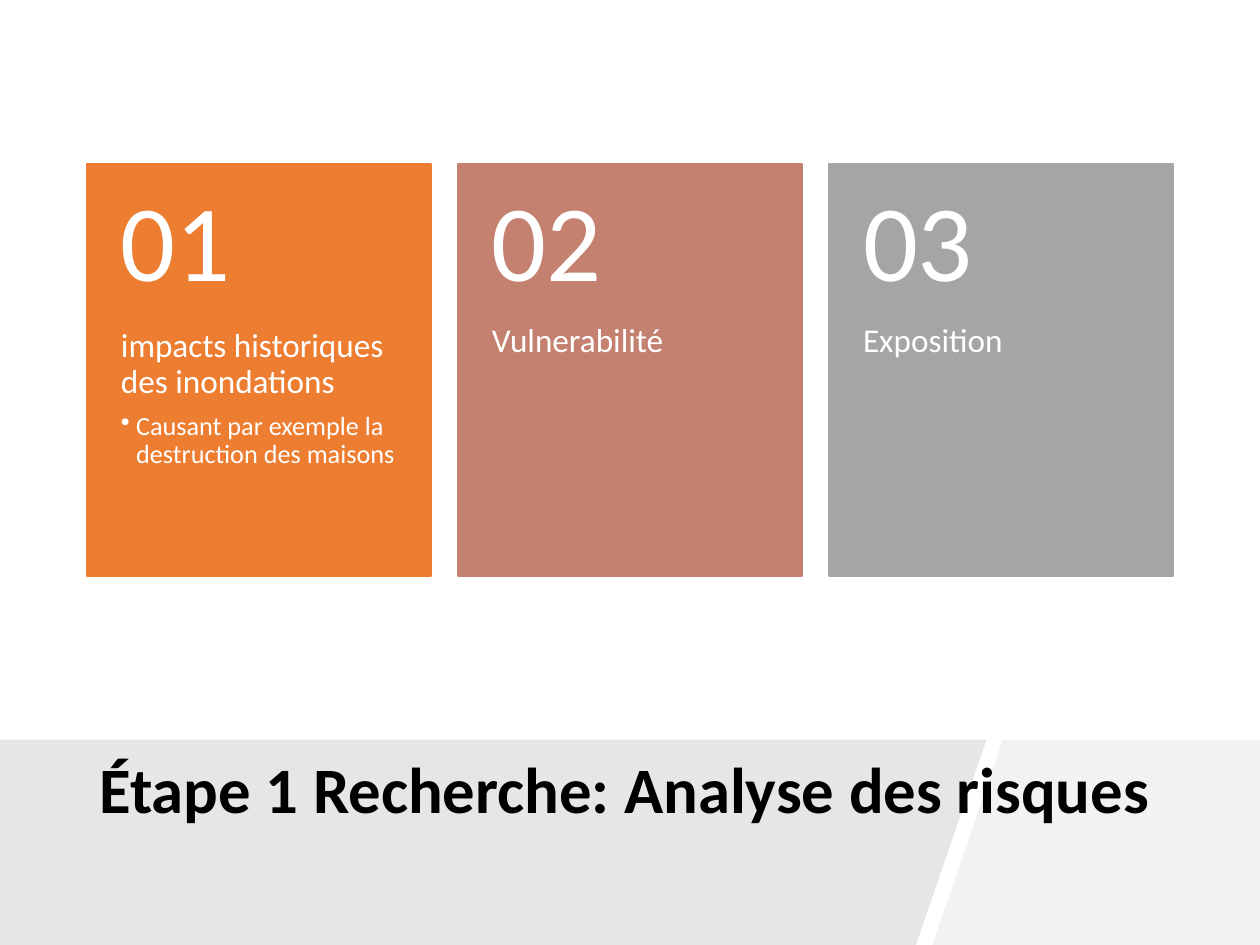
from lxml.etree import SubElement
from pptx import Presentation
from pptx.dml.color import RGBColor
from pptx.enum.shapes import MSO_SHAPE
from pptx.enum.text import MSO_ANCHOR, MSO_AUTO_SIZE, PP_ALIGN
from pptx.oxml.ns import qn
from pptx.util import Inches, Pt

FONT = "Calibri"
WHITE = "FFFFFF"
LEFT, TOP, WIDTH = 0.69, 1.3, 2.73
STEP = 2.945
HEAD, BODY = 1.31, 1.96

CARDS = [
    ("01", "ED7D31", "impacts historiques des inondations",
     "Causant par exemple la destruction des maisons"),
    ("02", "C48170", "Vulnerabilité", None),
    ("03", "A5A5A5", "Exposition", None),
]


def color(code):
    return RGBColor.from_string(code)


def add_band(slide, points, fill):
    corners = [(Inches(x), Inches(y)) for x, y in points]
    builder = slide.shapes.build_freeform(*corners[0])
    builder.add_line_segments(corners[1:], close=True)
    band = builder.convert_to_shape()
    band.shadow.inherit = False
    band.fill.solid()
    band.fill.fore_color.rgb = color(fill)
    band.line.fill.background()


def write(para, text, size, code, after=0, bold=False):
    para.alignment = PP_ALIGN.LEFT
    para.line_spacing = 0.9
    para.space_after = Pt(after)
    run = para.add_run()
    run.text = text
    run.font.name = FONT
    run.font.size = Pt(size)
    run.font.bold = bold
    run.font.color.rgb = color(code)


def add_bullet(para):
    props = para._p.get_or_add_pPr()
    props.set("marL", str(Inches(0.12)))
    props.set("indent", str(Inches(-0.12)))
    SubElement(props, qn("a:buChar")).set("char", "•")


def add_text(group, left, top, height, anchor, inset_top, inset_low):
    box = group.shapes.add_textbox(
        Inches(left), Inches(top), Inches(WIDTH), Inches(height))
    frame = box.text_frame
    frame.word_wrap = True
    frame.vertical_anchor = anchor
    frame.margin_left = frame.margin_right = Inches(0.27)
    frame.margin_top = Inches(inset_top)
    frame.margin_bottom = Inches(inset_low)
    return frame


def add_card(group, left, number, fill, label, detail):
    card = group.shapes.add_shape(
        MSO_SHAPE.RECTANGLE, Inches(left), Inches(TOP),
        Inches(WIDTH), Inches(HEAD + BODY))
    card.shadow.inherit = False
    card.fill.solid()
    card.fill.fore_color.rgb = color(fill)
    card.line.color.rgb = color(fill)
    card.line.width = Pt(1)

    # Label with optional detail
    frame = add_text(group, left, TOP + HEAD, BODY, MSO_ANCHOR.TOP, 0, 0.36)
    write(frame.paragraphs[0], label, 19, WHITE, after=7)
    if detail:
        para = frame.add_paragraph()
        write(para, detail, 15, WHITE, after=2)
        add_bullet(para)

    # Number
    frame = add_text(group, left, TOP, HEAD, MSO_ANCHOR.MIDDLE, 0.18, 0.18)
    write(frame.paragraphs[0], number, 62, WHITE)


def set_title(slide, text):
    title = slide.shapes.title
    title.left, title.top = Inches(0.69), Inches(5.69)
    title.width, title.height = Inches(8.73), Inches(1.2)
    frame = title.text_frame
    frame.word_wrap = True
    frame.auto_size = MSO_AUTO_SIZE.NONE
    frame.vertical_anchor = MSO_ANCHOR.MIDDLE
    write(frame.paragraphs[0], text, 37, "000000", bold=True)
    # Bring the title in front of the bands
    title.element.getparent().append(title.element)


def main():
    deck = Presentation()
    deck.slide_width, deck.slide_height = Inches(10), Inches(7.5)
    slide = deck.slides.add_slide(deck.slide_layouts[5])

    # Footer bands and title
    add_band(slide, [(7.96, 5.87), (10, 5.87), (10, 7.5), (7.4, 7.5)], "F2F2F2")
    add_band(slide, [(0, 5.87), (7.83, 5.87), (7.27, 7.5), (0, 7.5)], "E7E6E6")
    set_title(slide, "Étape 1 Recherche: Analyse des risques")

    # Row of cards
    group = slide.shapes.add_group_shape()
    for i, card in enumerate(CARDS):
        add_card(group, LEFT + i * STEP, *card)

    deck.save("out.pptx")


if __name__ == "__main__":
    main()
